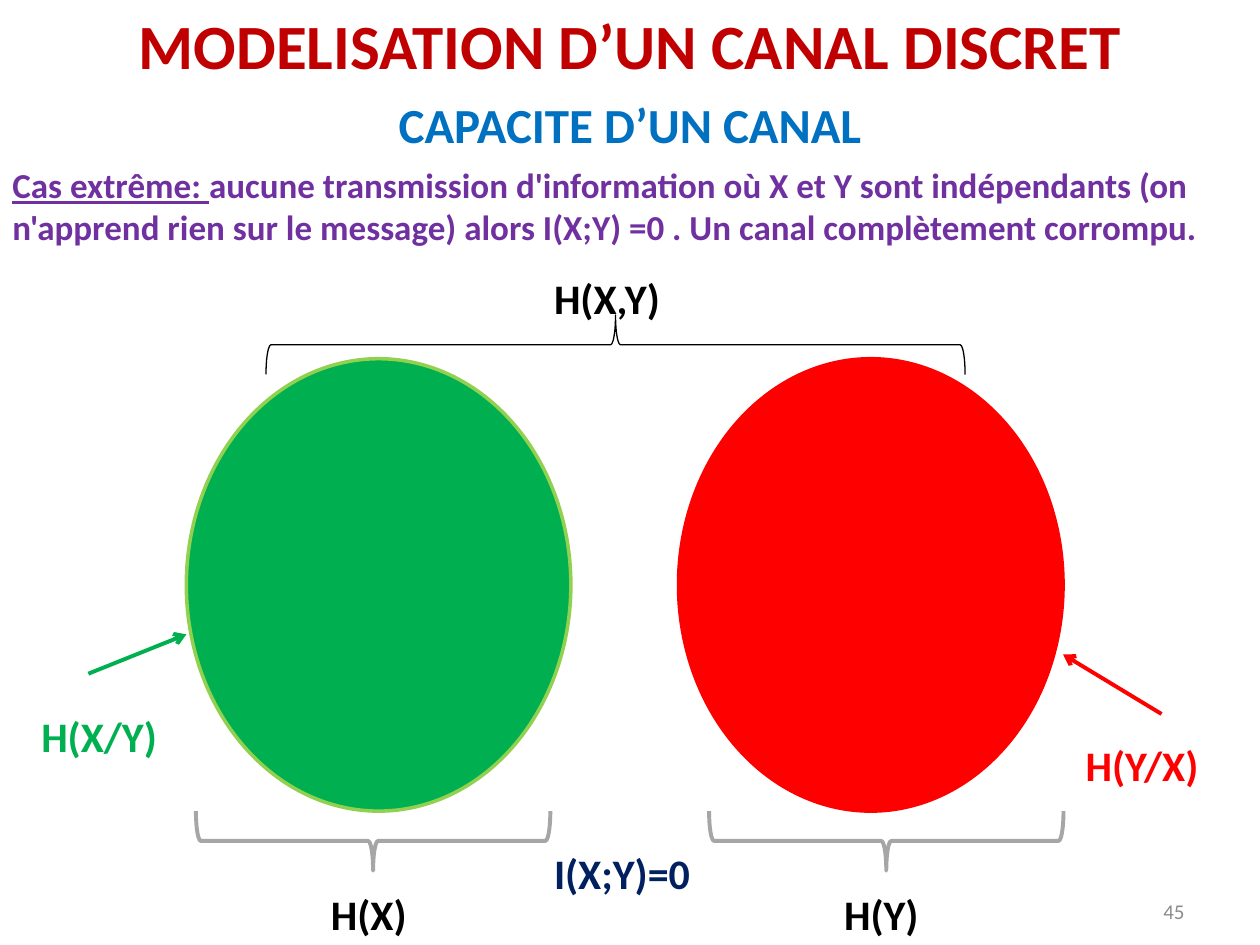
from lxml import etree
from pptx import Presentation
from pptx.dml.color import RGBColor
from pptx.enum import shapes, text as tx
from pptx.oxml import ns
from pptx.util import Pt

INK = {
    "title": "C00000", "topic": "0070C0", "note": "7030A0", "navy": "002060",
    "green": "00B050", "lime": "92D050", "red": "FF0000", "gray": "A6A6A6",
    "page": "8C8C8C", "black": "000000",
}
KIND = shapes.MSO_SHAPE
ALIGN = tx.PP_ALIGN


def tint(name):
    return RGBColor.from_string(INK[name])


def say(slide, box, words, size=24, ink="black", bold=True, lead="",
        align=ALIGN.LEFT, anchor=tx.MSO_ANCHOR.TOP):
    frame = slide.shapes.add_textbox(*map(Pt, box)).text_frame
    frame.word_wrap = True
    frame.vertical_anchor = anchor
    para = frame.paragraphs[0]
    para.alignment = align
    for part, under in ((lead, True), (words, False)):
        if part:
            run = para.add_run()
            run.text = part
            font = run.font
            font.name, font.size, font.bold = "Calibri", Pt(size), bold
            font.underline = under
            font.color.rgb = tint(ink)


def draw(slide, kind, box, line, width, fill=None):
    shape = slide.shapes.add_shape(kind, *map(Pt, box))
    shape.shadow.inherit = False
    if fill:
        shape.fill.solid()
        shape.fill.fore_color.rgb = tint(fill)
    else:
        shape.fill.background()
    shape.line.color.rgb = tint(line)
    shape.line.width = Pt(width)
    return shape


def brace(slide, kind, box, line, width):
    x, y, w, h = box
    turned = (x + (w - h) / 2, y + (h - w) / 2, h, w)
    draw(slide, kind, turned, line, width).rotation = 270


def arrow(slide, start, end, ink):
    line = slide.shapes.add_connector(
        shapes.MSO_CONNECTOR.STRAIGHT, *map(Pt, start + end))
    line.line.color.rgb = tint(ink)
    line.line.width = Pt(2.25)
    etree.SubElement(line.line._get_or_add_ln(), ns.qn("a:tailEnd"), type="arrow")
    etree.SubElement(line._element.spPr, ns.qn("a:effectLst"))


def head(slide, box):
    x, y, w, h = box
    say(slide, (x, y, w, 51), "MODELISATION D’UN CANAL DISCRET",
        size=36, ink="title", align=ALIGN.CENTER)
    say(slide, (x, y + 50.4, w, 63), "CAPACITE D’UN CANAL",
        size=28, ink="topic", align=ALIGN.CENTER)
    say(slide, (x, y + 90, w, h - 90),
        "aucune transmission d'information où X et Y sont indépendants "
        "(on n'apprend rien sur le message) alors I(X;Y) =0 . "
        "Un canal complètement corrompu.",
        size=20, ink="note", lead="Cas extrême: ")


def disc(slide, box, fill, edge, name, shift, part, spot, start, end):
    x, y, w, h = box
    draw(slide, KIND.OVAL, box, edge, 2, fill)
    brace(slide, KIND.LEFT_BRACE, (x + shift, y + h, 202.5, 34), "gray", 2.25)
    say(slide, (x + shift + 70, y + h + 40.5, 68, 36), name)
    arrow(slide, (x + start[0], y + start[1]), (x + end[0], y + end[1]), fill)
    say(slide, (x + spot[0], y + spot[1], 90, 36), part, ink=fill)


def venn(slide, box):
    x, y, w, h = box
    wide, tall = 219.75, 258.5
    disc(slide, (x, y + 53, wide, tall), "green", "lime", "H(X)", 5.5,
         "H(X/Y)", (-90, 197.5), (-56, 180), (0, 157.5))
    disc(slide, (x + w - wide, y + 53, wide, tall), "red", "red", "H(Y)", 17.5,
         "H(Y/X)", (225.5, 214), (276, 203), (wide, 169))
    brace(slide, KIND.RIGHT_BRACE, (x + 45.5, y + 28, 399.5, 34), "black", 0.75)
    say(slide, (x + 203, y, 90, 36), "H(X,Y)")
    say(slide, (x + 203, y + h - 36, 101.5, 36), "I(X;Y)=0", ink="navy")


def main():
    deck = Presentation()
    deck.slide_width, deck.slide_height = Pt(720), Pt(540)
    slide = deck.slides.add_slide(deck.slide_layouts[6])
    head(slide, (0, 0, 720, 145.5))
    venn(slide, (106.5, 152, 501, 365))
    say(slide, (516, 506, 168, 29), "45", size=12, ink="page", bold=False,
        align=ALIGN.RIGHT, anchor=tx.MSO_ANCHOR.MIDDLE)
    deck.save("out.pptx")


if __name__ == "__main__":
    main()
